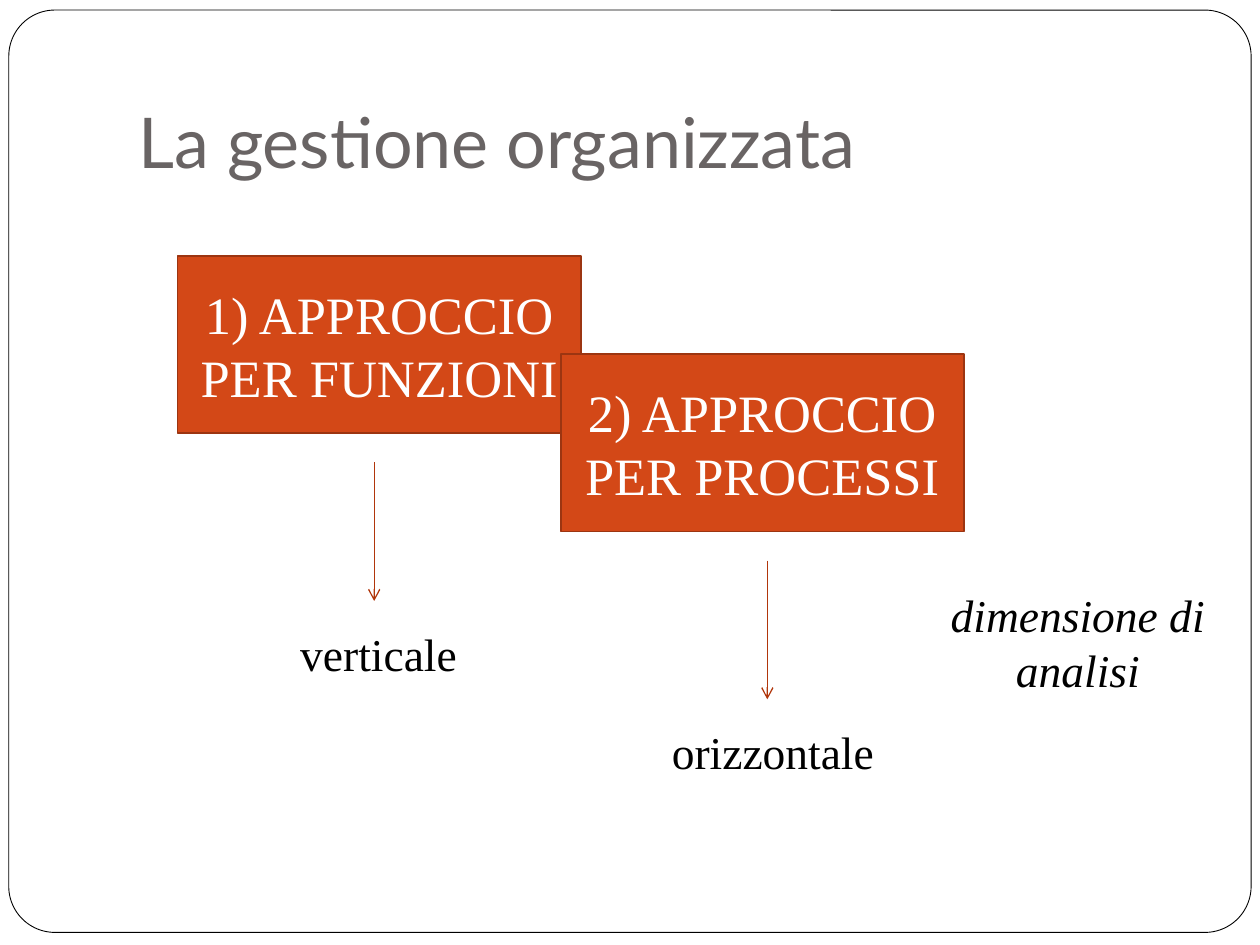
from lxml import etree
from pptx import Presentation
from pptx.dml.color import RGBColor
from pptx.enum.shapes import MSO_CONNECTOR, MSO_SHAPE
from pptx.enum.text import MSO_ANCHOR as Anchor, PP_ALIGN as Align
from pptx.oxml.ns import qn
from pptx.util import Inches, Pt

COLORS = {
    "white": "FFFFFF", "black": "000000", "title": "696464",
    "box": "D34817", "box_line": "9C3511", "arrow": "B1360B",
}


def color(name):
    return RGBColor.from_string(COLORS[name])


def write(shape, text, size=26, font="Times New Roman", fill="black",
          italic=False, align=Align.CENTER, anchor=Anchor.TOP, bottom=0.05):
    frame = shape.text_frame
    frame.word_wrap = True
    frame.vertical_anchor = anchor
    frame.margin_left = frame.margin_right = Inches(0.1)
    frame.margin_top, frame.margin_bottom = Inches(0.05), Inches(bottom)
    paragraph = frame.paragraphs[0]
    paragraph.alignment = align
    run = paragraph.add_run()
    run.text = text
    run.font.size = Pt(size)
    run.font.name = font
    run.font.italic = italic
    run.font.color.rgb = color(fill)


presentation = Presentation()
presentation.slide_width, presentation.slide_height = Inches(10), Inches(7.5)
slide = presentation.slides.add_slide(presentation.slide_layouts[5])
shapes = slide.shapes

# Rounded border, placed behind the title
border = shapes.add_shape(MSO_SHAPE.ROUNDED_RECTANGLE, Inches(0.07), Inches(0.08),
                          Inches(9.86), Inches(7.32))
border.adjustments[0] = 0.05
border.shadow.inherit = False
border.fill.solid()
border.fill.fore_color.rgb = color("white")
border.line.color.rgb = color("black")
border.line.width = Pt(0.5)
title = shapes.title
title.element.addprevious(border.element)

title.left, title.top = Inches(1), Inches(0.3)
title.width, title.height = Inches(8.5), Inches(1.25)
write(title, "La gestione organizzata", size=40, font="Lato", fill="title",
      align=Align.LEFT, anchor=Anchor.BOTTOM, bottom=0.1)

# Each approach: box, arrow below it, dimension of analysis
approaches = [
    ("1) APPROCCIO PER FUNZIONI", "verticale", 1.41, 2.03, 2.97, 1.48),
    ("2) APPROCCIO PER PROCESSI", "orizzontale", 4.45, 2.81, 6.09, 4.61),
]
for approach, dimension, left, top, arrow_x, label_left in approaches:
    box = shapes.add_shape(MSO_SHAPE.RECTANGLE, Inches(left), Inches(top),
                           Inches(3.2), Inches(1.41))
    box.shadow.inherit = False
    box.fill.solid()
    box.fill.fore_color.rgb = color("box")
    box.line.color.rgb = color("box_line")
    box.line.width = Pt(1)
    write(box, approach, size=30, fill="white", anchor=Anchor.MIDDLE)

    arrow = shapes.add_connector(MSO_CONNECTOR.STRAIGHT,
                                 Inches(arrow_x), Inches(top + 1.64),
                                 Inches(arrow_x), Inches(top + 2.74))
    arrow.line.color.rgb = color("arrow")
    arrow.line.width = Pt(0.75)
    etree.SubElement(arrow.line._get_or_add_ln(), qn("a:tailEnd"), type="arrow")
    etree.SubElement(arrow.element.spPr, qn("a:effectLst"))

    label = shapes.add_textbox(Inches(label_left), Inches(top + 2.89),
                               Inches(3.05), Inches(0.54))
    write(label, dimension)

caption = shapes.add_textbox(Inches(7.42), Inches(4.61), Inches(2.27), Inches(0.98))
write(caption, "dimensione di analisi", italic=True)

presentation.save("out.pptx")
